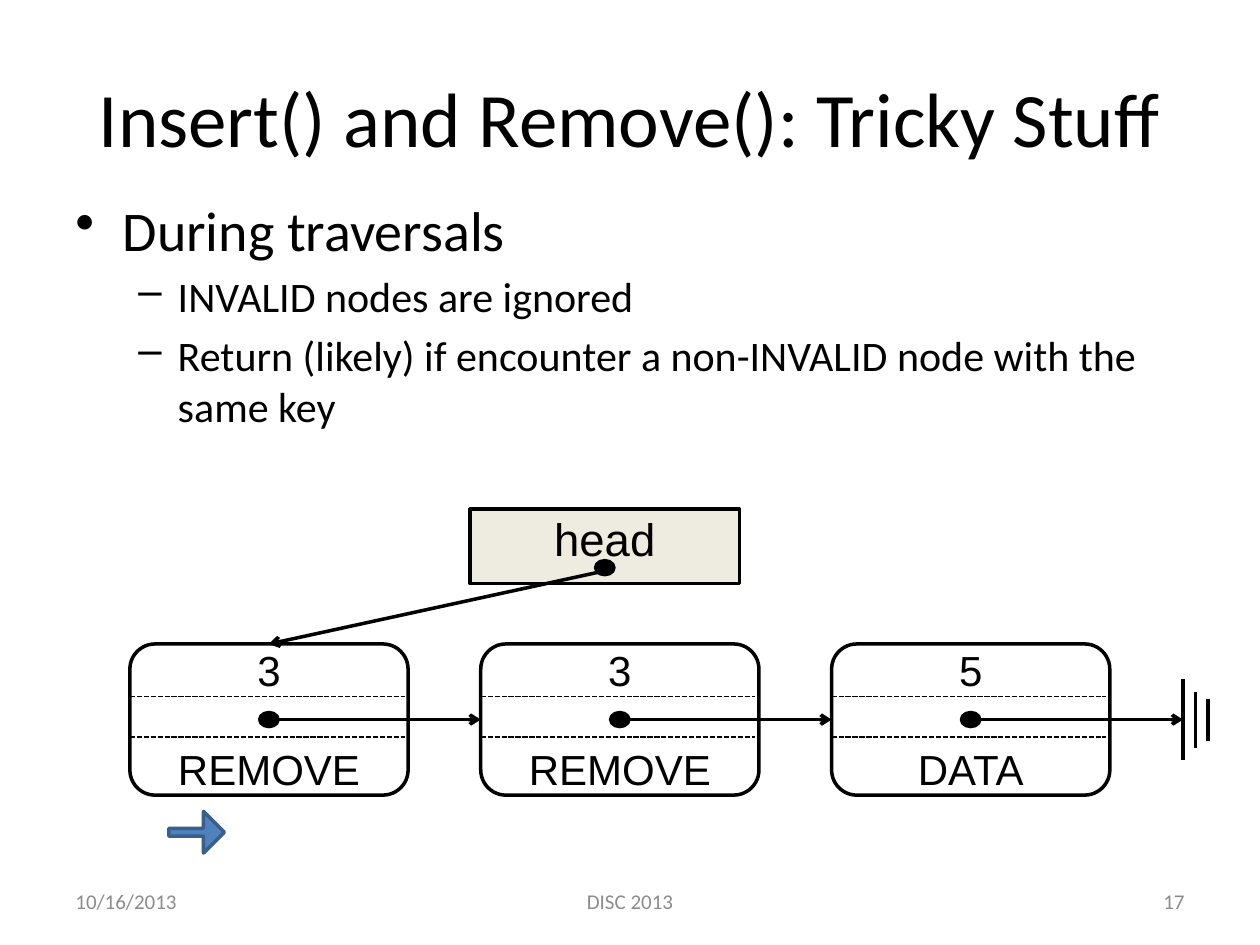
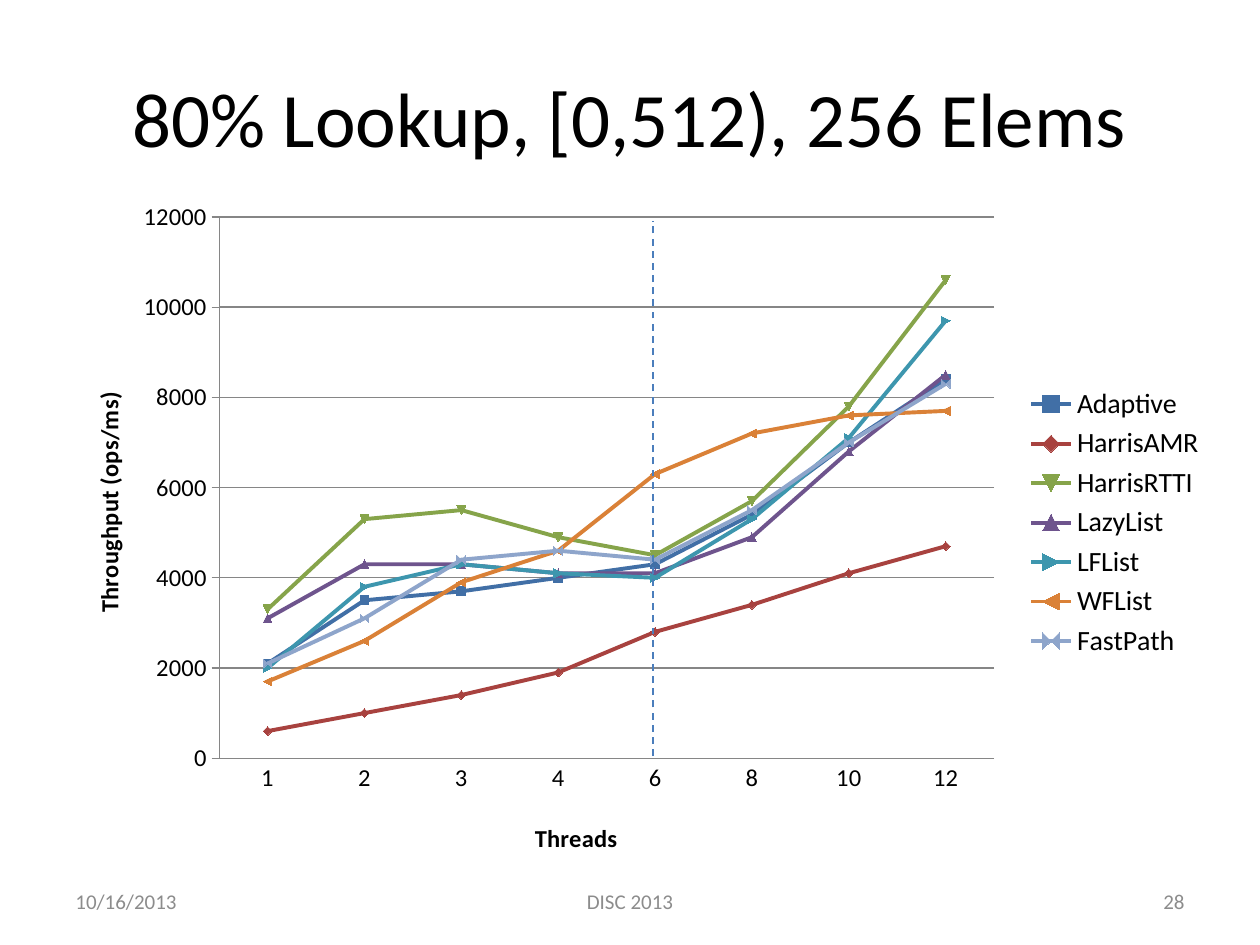
import pptx
import pptx.util
import pptx.chart.data
from dataclasses import dataclass
from lxml import etree
from pptx.dml.color import RGBColor
from pptx.enum.chart import XL_CHART_TYPE, XL_LEGEND_POSITION, XL_TICK_MARK
from pptx.enum.dml import MSO_LINE
from pptx.enum.shapes import MSO_CONNECTOR, MSO_SHAPE
from pptx.enum.text import MSO_ANCHOR, PP_ALIGN
from pptx.oxml.ns import qn

Pt = pptx.util.Pt


@dataclass(frozen=True)
class Theme:
    ink: str = "000000"
    muted: str = "8C8C8C"
    head_fill: str = "EEECE1"
    accent: str = "4F81BD"
    accent_edge: str = "3A5F8C"
    marker_line: str = "4B7EBC"
    grid: str = "868686"
    body_font: str = "Calibri"
    diagram_font: str = "Arial"
    title_size: int = 44
    footer_size: int = 12
    head_size: int = 26
    node_size: int = 24
    axis_size: int = 14
    legend_size: int = 16


THEME = Theme()

DATE, VENUE = "10/16/2013", "DISC 2013"
TRAVERSAL = {"title": "Insert() and Remove(): Tricky Stuff", "number": "17"}
LOOKUP = {"title": "80% Lookup, [0,512), 256 Elems", "number": "28"}

POINTS = [
    (0, "During traversals"),
    (1, "INVALID nodes are ignored"),
    (1, "Return (likely) if encounter a non-INVALID node with the same key"),
]
LEVELS = [
    {"bullet": "•", "size": 32, "margin": 27, "hang": 27},
    {"bullet": "–", "size": 24, "margin": 58.5, "hang": 22.5},
]
HEAD = "head"
NODES = [("3", "REMOVE"), ("3", "REMOVE"), ("5", "DATA")]
TERMINATOR_HEIGHTS = [46, 32, 24]

THREADS = ["1", "2", "3", "4", "6", "8", "10", "12"]
AXIS_TITLES = ("Threads", "Throughput (ops/ms)")
THROUGHPUT = [
    ("Adaptive", "416FA6", [2100, 3500, 3700, 4000, 4300, 5400, 7000, 8400]),
    ("HarrisAMR", "A8423F", [600, 1000, 1400, 1900, 2800, 3400, 4100, 4700]),
    ("HarrisRTTI", "86A44A", [3300, 5300, 5500, 4900, 4500, 5700, 7800, 10600]),
    ("LazyList", "6E548D", [3100, 4300, 4300, 4100, 4100, 4900, 6800, 8500]),
    ("LFList", "3D96AE", [2000, 3800, 4300, 4100, 4000, 5300, 7100, 9700]),
    ("WFList", "DA8137", [1700, 2600, 3900, 4600, 6300, 7200, 7600, 7700]),
    ("FastPath", "8EA5CB", [2100, 3100, 4400, 4600, 4400, 5500, 7000, 8300]),
]


def rgb(colour):
    return RGBColor.from_string(colour)


def box(*lengths):
    return [Pt(length) for length in lengths]


def set_font(font, size, name=THEME.body_font, colour=THEME.ink, bold=None):
    font.size, font.name, font.bold = Pt(size), name, bold
    font.color.rgb = rgb(colour)


def set_line(line, colour=THEME.ink, width=2, dash=None):
    line.color.rgb, line.width = rgb(colour), Pt(width)
    if dash:
        line.dash_style = dash


def add_text(slide, place, text, size, align, colour=THEME.ink):
    frame = slide.shapes.add_textbox(*box(*place)).text_frame
    frame.word_wrap, frame.vertical_anchor = True, MSO_ANCHOR.MIDDLE
    paragraph = frame.paragraphs[0]
    paragraph.text, paragraph.alignment = text, align
    set_font(paragraph.font, size, colour=colour)


def add_frame(deck, content):
    slide = deck.slides.add_slide(deck.slide_layouts[6])
    add_text(slide, (36, 21.6, 648, 90), content["title"], THEME.title_size, PP_ALIGN.CENTER)
    for left, width, text, align in [
        (36, 168, DATE, PP_ALIGN.LEFT),
        (246, 228, VENUE, PP_ALIGN.CENTER),
        (516, 168, content["number"], PP_ALIGN.RIGHT),
    ]:
        add_text(slide, (left, 500.5, width, 28.8), text, THEME.footer_size, align, THEME.muted)
    return slide


def add_points(slide):
    frame = slide.shapes.add_textbox(*box(36, 108, 648, 162)).text_frame
    frame.word_wrap = True
    for index, (depth, text) in enumerate(POINTS):
        level = LEVELS[depth]
        paragraph = frame.add_paragraph() if index else frame.paragraphs[0]
        paragraph.text, paragraph.level = text, depth
        paragraph.space_before = Pt(level["size"] * 0.2)
        set_font(paragraph.font, level["size"])
        properties = paragraph._p.get_or_add_pPr()
        properties.set("marL", str(Pt(level["margin"])))
        properties.set("indent", str(-Pt(level["hang"])))
        bullet = etree.Element(qn("a:buChar"), char=level["bullet"])
        properties.find(qn("a:spcBef")).addnext(bullet)


def add_figure(slide, kind, place, fill=None, edge=THEME.ink):
    figure = slide.shapes.add_shape(kind, *box(*place))
    figure.shadow.inherit = False
    if fill:
        figure.fill.solid()
        figure.fill.fore_color.rgb = rgb(fill)
    else:
        figure.fill.background()
    set_line(figure.line, edge)
    return figure


def add_label(figure, lines, size, insets, gap=0):
    frame = figure.text_frame
    frame.word_wrap, frame.vertical_anchor = True, MSO_ANCHOR.MIDDLE
    frame.margin_left, frame.margin_top, frame.margin_right, frame.margin_bottom = box(*insets)
    for index, text in enumerate(lines):
        paragraph = frame.add_paragraph() if index else frame.paragraphs[0]
        paragraph.text, paragraph.alignment = text, PP_ALIGN.CENTER
        paragraph.space_before = Pt(gap if index else 0)
        set_font(paragraph.font, size, THEME.diagram_font)


def add_rule(slide, start, end, colour=THEME.ink, width=2, dash=None, arrow=False):
    rule = slide.shapes.add_connector(MSO_CONNECTOR.STRAIGHT, *box(*start, *end))
    set_line(rule.line, colour, width, dash)
    properties = rule._element.spPr
    if arrow:
        etree.SubElement(properties.find(qn("a:ln")), qn("a:tailEnd"), type="arrow")
    etree.SubElement(properties, qn("a:effectLst"))
    return rule


def add_dot(slide, x, y):
    add_figure(slide, MSO_SHAPE.OVAL, (x - 5.25, y - 4, 10.5, 8), THEME.ink)


def add_linked_list(slide):
    first, pitch, top, width, height = 74.2, 200.5, 368, 159, 86.4
    middle, terminator = top + height / 2, 676
    head = add_figure(slide, MSO_SHAPE.RECTANGLE, (268.6, 291, 154, 42.5), THEME.head_fill)
    add_label(head, [HEAD], THEME.head_size, (7.2, 1.5, 7.2, 10.8))
    add_dot(slide, 345.6, 324.4)

    nodes = []
    for index, lines in enumerate(NODES):
        left = first + index * pitch
        node = add_figure(slide, MSO_SHAPE.ROUNDED_RECTANGLE, (left, top, width, height))
        add_label(node, lines, THEME.node_size, (0, 3.6, 0, 3.6), gap=27.6)
        add_dot(slide, left + width / 2, middle)
        for y in (398, 421.3):
            add_rule(slide, (left, y), (left + 157, y), width=1, dash=MSO_LINE.SQUARE_DOT)
        nodes.append(node)

    for index in range(len(nodes)):
        left = first + index * pitch
        last = index == len(nodes) - 1
        end = terminator if last else left + pitch
        link = add_rule(slide, (left + width / 2 + 5, middle), (end, middle), arrow=True)
        if not last:
            link.end_connect(nodes[index + 1], 1)
    entry = add_rule(slide, (342, 327), (first + width / 2, top), arrow=True)
    entry.end_connect(nodes[0], 0)

    for index, length in enumerate(TERMINATOR_HEIGHTS):
        x = terminator + index * 7.2
        add_rule(slide, (x, middle - length / 2), (x, middle + length / 2))
    cursor = add_figure(slide, MSO_SHAPE.RIGHT_ARROW, (96.5, 463.7, 31.7, 23.8),
                        THEME.accent, THEME.accent_edge)
    cursor.adjustments[0] = 0.19


def set_layout(element, **values):
    for old in element.findall(qn("c:layout")):
        element.remove(old)
    layout = etree.Element(qn("c:layout"))
    manual = etree.SubElement(layout, qn("c:manualLayout"))
    for key, value in values.items():
        etree.SubElement(manual, qn("c:" + key), val=str(value))
    element.insert(0 if element.find(qn("c:tx")) is None else 1, layout)


def add_throughput(slide):
    data = pptx.chart.data.CategoryChartData()
    data.categories = THREADS
    for name, _, values in THROUGHPUT:
        data.add_series(name, values)
    chart = slide.shapes.add_chart(
        XL_CHART_TYPE.LINE_MARKERS, *box(30, 108, 666, 384), data).chart
    set_font(chart.font, 10)
    chart.has_title = False
    chart.has_legend = True
    chart.legend.position = XL_LEGEND_POSITION.RIGHT
    chart.legend.include_in_layout = False
    set_font(chart.legend.font, THEME.legend_size)
    plot = chart.plots[0]
    plot.vary_by_categories = False
    for series, (_, colour, _) in zip(plot.series, THROUGHPUT):
        series.smooth = False
        set_line(series.format.line, colour, 2.25)
        series.marker.size = 5
        series.marker.format.fill.solid()
        series.marker.format.fill.fore_color.rgb = rgb(colour)
        set_line(series.marker.format.line, colour, 0.75)

    axes = (chart.category_axis, chart.value_axis)
    ticks = (XL_TICK_MARK.NONE, XL_TICK_MARK.OUTSIDE)
    corners = ((0.41, 0.94), (0.03, 0.3))
    for axis, title, tick, (x, y) in zip(axes, AXIS_TITLES, ticks, corners):
        axis.major_tick_mark, axis.minor_tick_mark = tick, XL_TICK_MARK.NONE
        set_font(axis.tick_labels.font, THEME.axis_size)
        set_line(axis.format.line, THEME.grid, 0.75)
        paragraph = axis.axis_title.text_frame.paragraphs[0]
        paragraph.text = title
        set_font(paragraph.font, THEME.axis_size, bold=True)
        set_layout(axis.axis_title._element, xMode="edge", yMode="edge", x=x, y=y)
    values = chart.value_axis
    values.minimum_scale, values.maximum_scale, values.major_unit = 0, 12000, 2000
    values.has_major_gridlines = True
    set_line(values.major_gridlines.format.line, THEME.grid, 0.75)
    set_layout(chart._chartSpace.chart.plotArea, layoutTarget="inner", xMode="edge",
               yMode="edge", x=0.143, y=0.042, w=0.665, h=0.811)
    add_rule(slide, (373, 432), (373, 126), THEME.marker_line, 1, MSO_LINE.DASH)


def main():
    deck = pptx.Presentation()
    deck.slide_width, deck.slide_height = box(720, 540)
    traversal = add_frame(deck, TRAVERSAL)
    add_points(traversal)
    add_linked_list(traversal)
    add_throughput(add_frame(deck, LOOKUP))
    deck.save("out.pptx")


if __name__ == "__main__":
    main()
